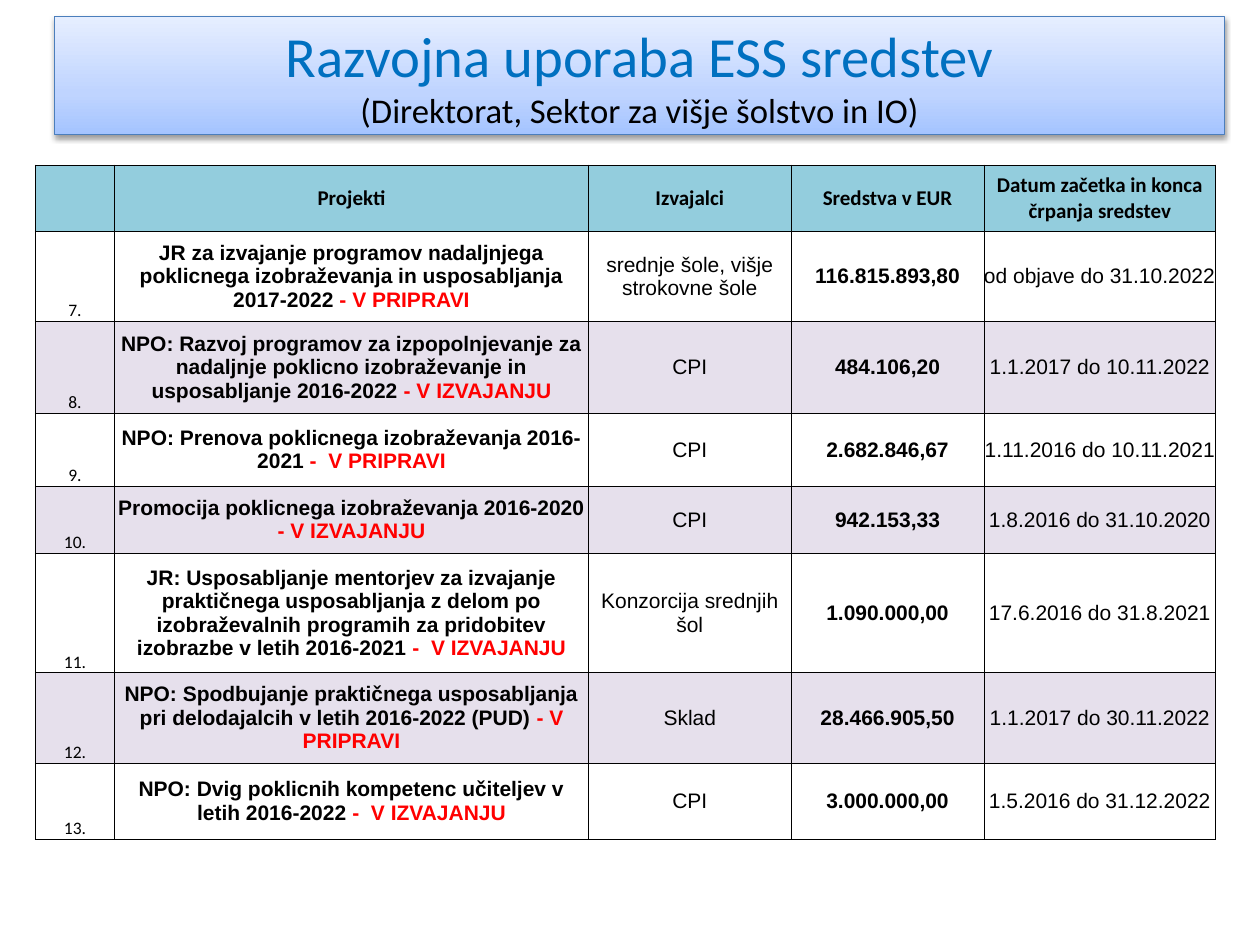
from lxml.etree import SubElement
from pptx import Presentation
from pptx.dml.color import RGBColor
from pptx.enum.text import MSO_ANCHOR as ANCHOR, MSO_AUTO_SIZE as AUTO, PP_ALIGN as ALIGN
from pptx.oxml import parse_xml
from pptx.oxml.ns import nsdecls, qn
from pptx.util import Inches, Pt

COLORS = {
    "black": "000000", "red": "FF0000", "blue": "0070C0",
    "header": "93CDDD", "band": "E6E0EC", "title_line": "4B7EBC",
    "grad_low": "A4C4FF", "grad_mid": "BFD4FF", "grad_high": "E6EEFF",
}


def color(name):
    return RGBColor.from_string(COLORS[name])


def add_text(p, text, size=12, font="Arial", fill="black", bold=False, align=ALIGN.CENTER):
    p.alignment = align
    r = p.add_run()
    r.text = text
    r.font.size = Pt(size)
    r.font.name = font
    r.font.bold = bold
    r.font.color.rgb = color(fill)


prs = Presentation()
prs.slide_width, prs.slide_height = Inches(10), Inches(7.5)
s = prs.slides.add_slide(prs.slide_layouts[5])

# Title box with gradient and shadow
sp = s.shapes.title
sp.left, sp.top, sp.width, sp.height = Inches(0.43), Inches(0.13), Inches(9.29), Inches(0.94)
stops = "".join(
    f'<a:gs pos="{pos}"><a:srgbClr val="{COLORS[name]}"/></a:gs>'
    for pos, name in ((0, "grad_low"), (35000, "grad_mid"), (100000, "grad_high")))
spPr = sp.element.spPr
spPr.append(parse_xml(
    f'<a:gradFill {nsdecls("a")} rotWithShape="1"><a:gsLst>{stops}</a:gsLst>'
    '<a:lin ang="16200000" scaled="0"/></a:gradFill>'))
sp.line.color.rgb = color("title_line")
sp.line.width = Pt(0.75)
spPr.append(parse_xml(
    f'<a:effectLst {nsdecls("a")}><a:outerShdw blurRad="{Pt(3.1)}" dist="{Pt(1.6)}" '
    f'dir="5400000" rotWithShape="0"><a:srgbClr val="{COLORS["black"]}">'
    '<a:alpha val="38000"/></a:srgbClr></a:outerShdw></a:effectLst>'))

tf = sp.text_frame
tf.word_wrap = True
tf.auto_size = AUTO.NONE
tf.vertical_anchor = ANCHOR.MIDDLE
p = tf.paragraphs[0]
add_text(p, "Razvojna uporaba ESS sredstev", size=32.4, font="Calibri", fill="blue")
p.add_line_break()
add_text(p, "(Direktorat, Sektor za višje šolstvo in IO)", size=19.8, font="Calibri")

# Table content: project, status, contractor, funds, dates
header = ["", "Projekti", "Izvajalci", "Sredstva v EUR", "Datum začetka in konca črpanja sredstev"]
projects = [
    ("JR za izvajanje programov nadaljnjega poklicnega izobraževanja in usposabljanja 2017-2022",
     " - V PRIPRAVI", "srednje šole, višje strokovne šole", "116.815.893,80",
     "od objave do 31.10.2022"),
    ("NPO: Razvoj programov za izpopolnjevanje za nadaljnje poklicno izobraževanje in "
     "usposabljanje 2016-2022",
     " - V IZVAJANJU", "CPI", "484.106,20", "1.1.2017 do 10.11.2022"),
    ("NPO: Prenova poklicnega izobraževanja 2016-2021 ",
     "-  V PRIPRAVI", "CPI", "2.682.846,67", "1.11.2016 do 10.11.2021"),
    ("Promocija poklicnega izobraževanja 2016-2020 ",
     "- V IZVAJANJU", "CPI", "942.153,33", "1.8.2016 do 31.10.2020"),
    ("JR: Usposabljanje mentorjev za izvajanje praktičnega usposabljanja z delom po "
     "izobraževalnih programih za pridobitev izobrazbe v letih 2016-2021 ",
     "-  V IZVAJANJU", "Konzorcija srednjih šol", "1.090.000,00", "17.6.2016 do 31.8.2021"),
    ("NPO: Spodbujanje praktičnega usposabljanja pri delodajalcih v letih 2016-2022 (PUD) ",
     "- V PRIPRAVI", "Sklad", "28.466.905,50", "1.1.2017 do 30.11.2022"),
    ("NPO: Dvig poklicnih kompetenc učiteljev v letih 2016-2022 ",
     "-  V IZVAJANJU", "CPI", "3.000.000,00", "1.5.2016 do 31.12.2022"),
]
col_widths = [0.63, 3.76, 1.61, 1.53, 1.84]
row_heights = [0.53, 0.71, 0.73, 0.58, 0.53, 0.95, 0.72, 0.6]

# Table grid
table = s.shapes.add_table(len(row_heights), len(col_widths), Inches(0.28), Inches(1.31),
                           Inches(9.37), Inches(5.35)).table
table.first_row = table.horz_banding = False
for col, width in zip(table.columns, col_widths):
    col.width = Inches(width)
for row, height in zip(table.rows, row_heights):
    row.height = Inches(height)

# Cell margins, borders and fills
for i, row in enumerate(table.rows):
    for j, cell in enumerate(row.cells):
        cell.margin_left = cell.margin_right = cell.margin_top = cell.margin_bottom = 0
        cell.vertical_anchor = ANCHOR.BOTTOM if i and j == 0 else ANCHOR.MIDDLE
        tcPr = cell._tc.get_or_add_tcPr()
        for side in ("a:lnL", "a:lnR", "a:lnT", "a:lnB"):
            ln = SubElement(tcPr, qn(side), w=str(Pt(0.5)))
            SubElement(SubElement(ln, qn("a:solidFill")), qn("a:srgbClr"), val=COLORS["black"])
        if i % 2 and i:
            cell.fill.background()
        else:
            cell.fill.solid()
            cell.fill.fore_color.rgb = color("band" if i else "header")

# Header text
for j, label in enumerate(header):
    if label:
        add_text(table.cell(0, j).text_frame.paragraphs[0], label, font="Calibri", bold=True)

# Project rows, numbered from 7
for i, (project, status, contractor, funds, dates) in enumerate(projects, 1):
    number_p, project_p, contractor_p, funds_p, dates_p = (
        cell.text_frame.paragraphs[0] for cell in table.rows[i].cells)
    add_text(number_p, f"{i + 6}.", size=10, font="Calibri")
    add_text(project_p, project, bold=True)
    add_text(project_p, status, fill="red", bold=True)
    add_text(contractor_p, contractor)
    add_text(funds_p, funds, bold=True)
    add_text(dates_p, dates, align=ALIGN.LEFT if i == 1 else ALIGN.CENTER)

prs.save("out.pptx")
